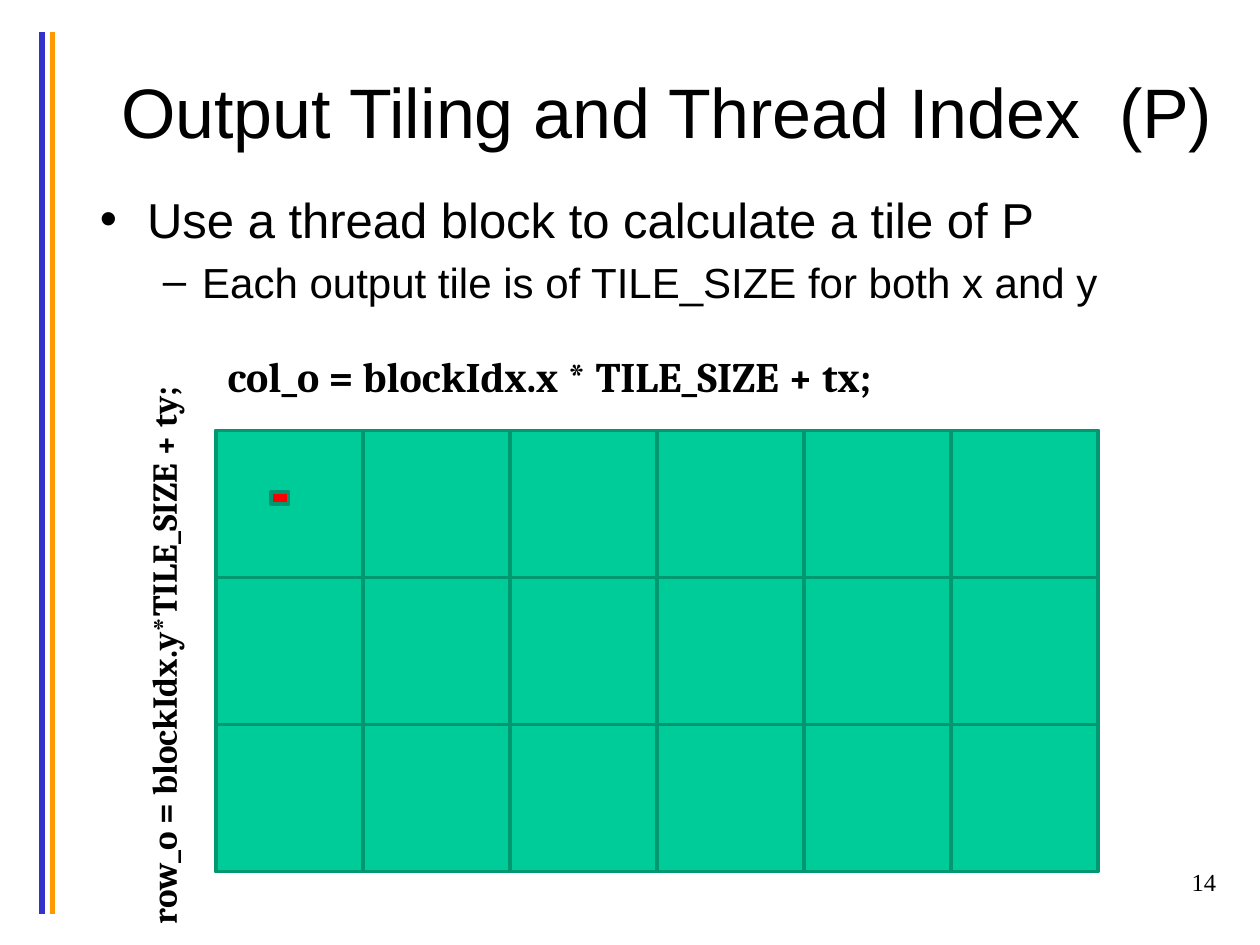
from pptx import Presentation
from pptx import util as u
from pptx.dml.color import RGBColor
from pptx.enum import shapes, text
from pptx.oxml.ns import qn
from lxml import etree

Pt = u.Pt
BLACK, GREEN, EDGE = "000000", "00CC99", "009771"
TILE, COLS, ROWS = 84, 6, 3
LEFT, TOP = 123.5, 246


def color(code):
    return RGBColor.from_string(code)


def apply(item, props):
    for key, value in props.items():
        setattr(item, key, value)


def bar(slide, x, code):
    line = slide.shapes.add_connector(
        shapes.MSO_CONNECTOR.STRAIGHT, Pt(x), Pt(18), Pt(x), Pt(522))
    line.line.color.rgb = color(code)
    line.line.width = Pt(3)
    etree.SubElement(line._element.spPr, qn("a:effectLst"))


def rect(slide, box, fill, edge=EDGE):
    shape = slide.shapes.add_shape(
        shapes.MSO_SHAPE.RECTANGLE, *map(Pt, box))
    shape.shadow.inherit = False
    shape.fill.solid()
    shape.fill.fore_color.rgb = color(fill)
    shape.line.color.rgb = color(edge)
    shape.line.width = Pt(2)


def write(par, words, size, font="Arial", bold=False, **props):
    run = par.add_run()
    run.text = words
    apply(run.font, {"size": Pt(size), "name": font, "bold": bold})
    run.font.color.rgb = color(BLACK)
    apply(par, props)


def area(slide, box, **props):
    shape = slide.shapes.add_textbox(*map(Pt, box))
    apply(shape.text_frame, {"word_wrap": True, **props})
    return shape


def label(slide, box, words, size, font="Arial", bold=False,
          align=text.PP_ALIGN.LEFT, **props):
    shape = area(slide, box, **props)
    write(shape.text_frame.paragraphs[0], words, size, font, bold,
          alignment=align)
    return shape


def bullet(par, mark, left, hang):
    props = par._p.get_or_add_pPr()
    props.set("marL", str(Pt(left)))
    props.set("indent", str(-Pt(hang)))
    etree.SubElement(props, qn("a:buFont")).set("typeface", "Arial")
    etree.SubElement(props, qn("a:buChar")).set("char", mark)


def points(slide, box, items):
    frame = area(slide, box).text_frame
    for i, (words, size, level, mark, left, hang) in enumerate(items):
        par = frame.add_paragraph() if i else frame.paragraphs[0]
        write(par, words, size, level=level, space_before=Pt(size * 0.2))
        bullet(par, mark, left, hang)


def tiles(slide):
    rect(slide, (LEFT, TOP, TILE * COLS, TILE * ROWS), GREEN)
    for n in range(COLS * ROWS - 1):
        row, col = divmod(n, COLS)
        rect(slide, (LEFT + col * TILE, TOP + row * TILE, TILE, TILE), GREEN)
    rect(slide, (155, 281, 10, 7), "FF0000")


def main():
    deck = Presentation()
    apply(deck, {"slide_width": Pt(720), "slide_height": Pt(540)})
    slide = deck.slides.add_slide(deck.slide_layouts[6])
    bar(slide, 24, "3333CC")
    bar(slide, 30, "FF9900")
    label(slide, (54, 18, 654, 90), "Output Tiling and Thread Index  (P)", 40,
          align=text.PP_ALIGN.CENTER,
          vertical_anchor=text.MSO_ANCHOR.MIDDLE)
    points(slide, (50, 104.5, 654, 360), [
        ("Use a thread block to calculate a tile of P",
         28, 0, "•", 27, 27),
        ("Each output tile is of TILE_SIZE for both x and y",
         24, 1, "–", 58.5, 22.5),
    ])
    label(slide, (552, 492, 150, 36), "14", 14, "Times New Roman",
          align=text.PP_ALIGN.RIGHT)
    tiles(slide)
    label(slide, (123, 197, 473, 36), "col_o = blockIdx.x * TILE_SIZE + tx;",
          24, "Cambria", True)
    side = label(slide, (-90, 340, 366.5, 31.5),
                 "row_o = blockIdx.y*TILE_SIZE + ty;", 20, "Cambria", True,
                 margin_left=Pt(11))
    side.rotation = 270
    side.fill.solid()
    side.fill.fore_color.rgb = color("FFFFFF")
    deck.save("out.pptx")


if __name__ == "__main__":
    main()
